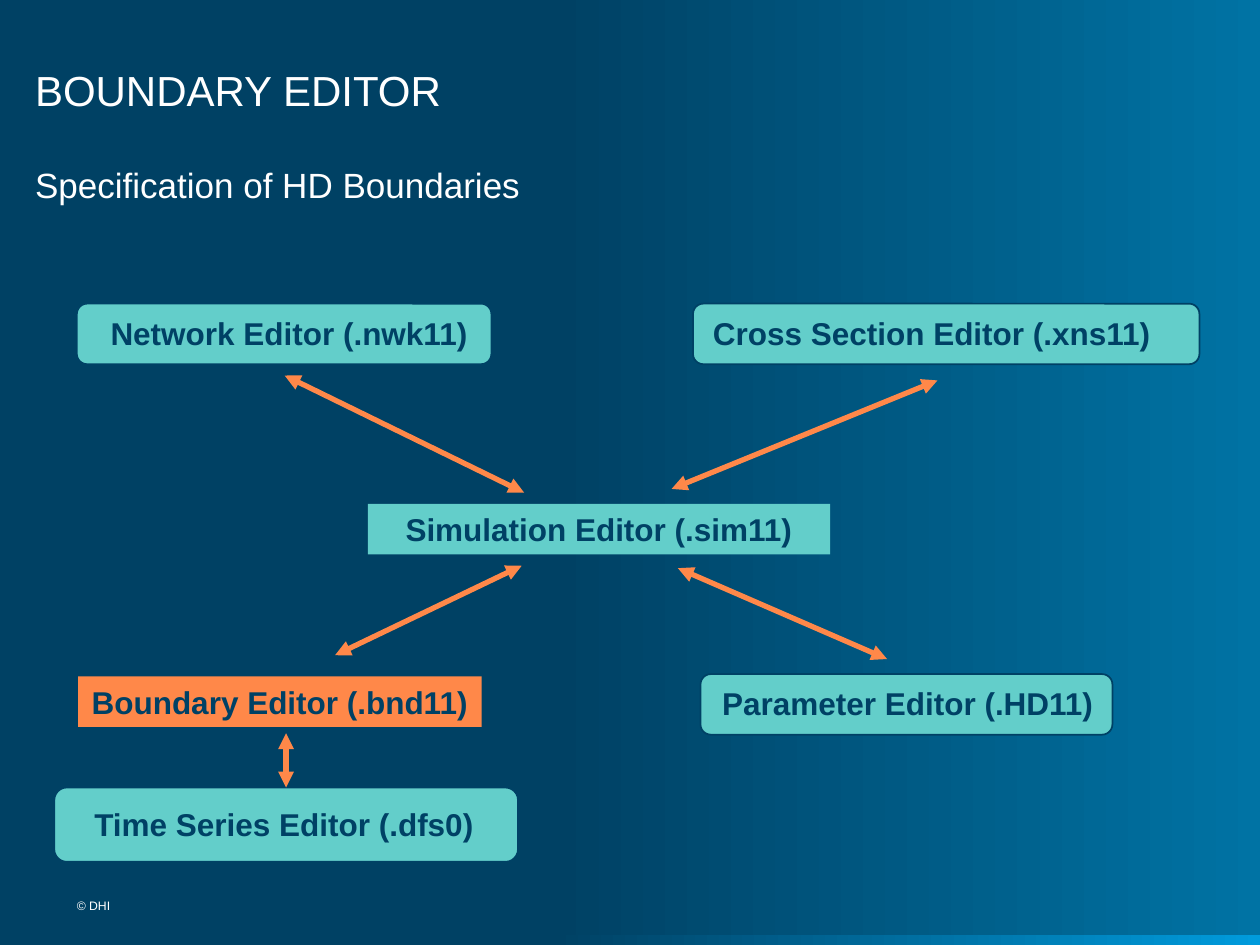
from lxml.etree import SubElement
from pptx import Presentation
from pptx.dml.color import RGBColor
from pptx.enum.shapes import MSO_CONNECTOR, MSO_SHAPE
from pptx.enum.text import MSO_ANCHOR, PP_ALIGN
from pptx.oxml.ns import qn
from pptx.util import Pt

COLORS = {
    "navy": "004164",
    "ink": "004165",
    "blue": "0073A4",
    "sky": "009BDC",
    "teal": "63CECA",
    "orange": "FF8849",
    "white": "FFFFFF",
}
LABEL_HEIGHT = 28.8


def rgb(name):
    return RGBColor.from_string(COLORS[name])


class Diagram:
    """Holds the style and the current slide; all lengths are in points."""

    font = "Arial"

    def __init__(self, slide):
        self.slide = slide

    def gradient(self, fill, end):
        """Fade from navy to the end colour, left to right."""
        fill.gradient()
        fill.gradient_angle = 0
        for stop, color, position in zip(fill.gradient_stops, ("navy", end), (0.44, 1)):
            stop.color.rgb = rgb(color)
            stop.position = position

    def bar(self, left, top, width, height, end):
        bar = self.slide.shapes.add_shape(
            MSO_SHAPE.RECTANGLE, Pt(left), Pt(top), Pt(width), Pt(height))
        bar.shadow.inherit = False
        bar.line.fill.background()
        self.gradient(bar.fill, end)

    def panel(self, left, top, width, height=34.6):
        panel = self.slide.shapes.add_shape(
            MSO_SHAPE.ROUNDED_RECTANGLE, Pt(left), Pt(top), Pt(width), Pt(height))
        panel.shadow.inherit = False
        panel.adjustments[0] = 0.17
        panel.fill.solid()
        panel.fill.fore_color.rgb = rgb("teal")
        panel.line.color.rgb = rgb("ink")
        panel.line.width = Pt(1)
        return panel

    def text(self, words, left, top, width, height, size, color="white",
             bold=False, anchor=MSO_ANCHOR.TOP, align=PP_ALIGN.LEFT, inset=(0, 0)):
        box = self.slide.shapes.add_textbox(Pt(left), Pt(top), Pt(width), Pt(height))
        frame = box.text_frame
        frame.text = words
        frame.word_wrap = True
        frame.vertical_anchor = anchor
        frame.margin_left = frame.margin_right = Pt(inset[0])
        frame.margin_top = frame.margin_bottom = Pt(inset[1])
        paragraph = frame.paragraphs[0]
        paragraph.alignment = align
        font = paragraph.runs[0].font
        font.name, font.size, font.bold = self.font, Pt(size), bold
        font.color.rgb = rgb(color)
        return box

    def label(self, words, left, top, width, fill=None, align=PP_ALIGN.CENTER):
        label = self.text(words, left, top, width, LABEL_HEIGHT, 18, "ink", True,
                          MSO_ANCHOR.MIDDLE, align, (7.2, 3.6))
        if fill:
            label.fill.solid()
            label.fill.fore_color.rgb = rgb(fill)

    def arrow(self, start, end):
        """Draw a line with an arrowhead at both ends."""
        arrow = self.slide.shapes.add_connector(
            MSO_CONNECTOR.STRAIGHT, *(Pt(value) for value in (*start, *end)))
        arrow.line.color.rgb = rgb("orange")
        arrow.line.width = Pt(3)
        properties = arrow.element.spPr
        line = properties.find(qn("a:ln"))
        for tag in ("a:headEnd", "a:tailEnd"):
            SubElement(line, qn(tag), type="triangle")
        SubElement(properties, qn("a:effectLst"))
        return arrow


def main():
    presentation = Presentation()
    presentation.slide_width, presentation.slide_height = Pt(720), Pt(540)
    slide = presentation.slides.add_slide(presentation.slide_layouts[6])
    diagram = Diagram(slide)
    diagram.gradient(slide.background.fill, "blue")
    diagram.bar(0, 534.4, 720, 5.6, "sky")

    diagram.text("BOUNDARY EDITOR", 20, 18, 619, 47.5, 24, anchor=MSO_ANCHOR.BOTTOM)
    diagram.text("Specification of HD Boundaries", 20, 93.6, 680, 403, 20)

    diagram.panel(400.3, 385.2, 235.4)
    time_series = diagram.panel(31, 450, 265, 42.5)
    diagram.panel(396, 173.5, 289.4)
    diagram.panel(43.9, 173.5, 236.9)

    diagram.label("Simulation Editor (.sim11)", 210.2, 288, 264.2, "teal")
    diagram.label("Cross Section Editor (.xns11)", 400.3, 175.7, 274.3, align=PP_ALIGN.LEFT)
    diagram.label("Parameter Editor (.HD11)", 383, 387.4, 271.4)
    diagram.label("Network Editor (.nwk11)", 54.7, 175.7, 221)
    diagram.label("Time Series Editor (.dfs0)", 44.6, 456.5, 235.4, "teal")
    diagram.label("Boundary Editor (.bnd11)", 44.6, 386.6, 230.6, "orange")

    for start, end in (
        ((299.5, 281.5), (162.7, 214.6)),
        ((383.8, 279.4), (535.7, 217.4)),
        ((191.5, 374.4), (298.1, 323.3)),
        ((506.9, 376.6), (387.4, 324.7)),
    ):
        diagram.arrow(start, end)
    diagram.arrow((163.5, 450), (163.5, 419)).begin_connect(time_series, 0)

    diagram.text("© DHI", 43.9, 513.4, 111.6, 13.7, 7)
    presentation.save("out.pptx")


if __name__ == "__main__":
    main()
